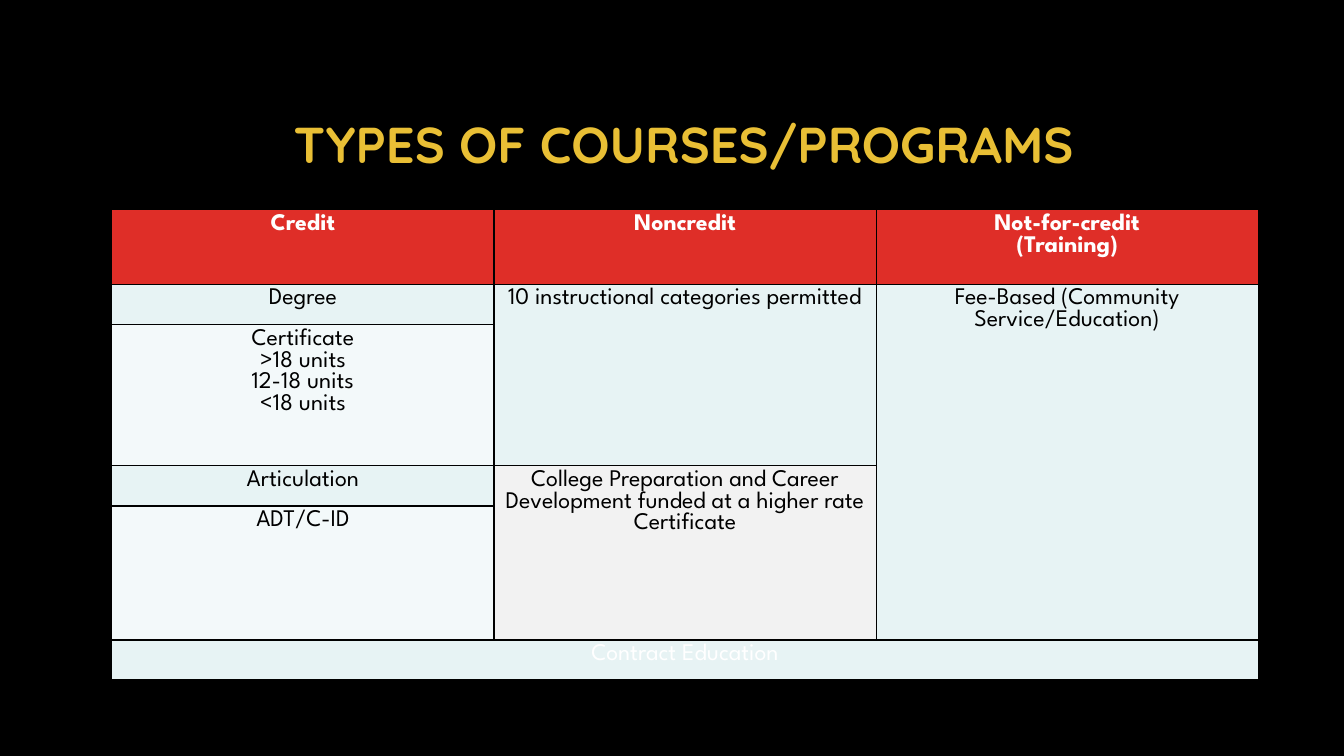
from lxml import etree
from pptx import Presentation
from pptx.dml.color import RGBColor
from pptx.enum import text
from pptx.oxml.ns import qn
from pptx.util import Inches, Pt

COLORS = {
    "black": "000000", "white": "FFFFFF", "gold": "E9BF35", "red": "DF2E28",
    "mint": "E7F3F4", "ice": "F3F9FA", "gray": "F2F2F2",
}
COLUMNS = [3.79] * 3
ROWS = [0.74, 0.4, 1.4, 0.4, 1.33, 0.39]
CELLS = [
    (0, 0, 1, 1, "Credit", "red"),
    (0, 1, 1, 1, "Noncredit", "red"),
    (0, 2, 1, 1, "Not-for-credit\n(Training)", "red"),
    (1, 0, 1, 1, "Degree", "mint"),
    (1, 1, 2, 1, "10 instructional categories permitted", "mint"),
    (1, 2, 4, 1, "Fee-Based (Community Service/Education)", "mint"),
    (2, 0, 1, 1, "Certificate\n>18 units\n12-18 units\n<18 units", "ice"),
    (3, 0, 1, 1, "Articulation", "mint"),
    (3, 1, 2, 1, "College Preparation and Career Development "
                 "funded at a higher rate\nCertificate", "gray"),
    (4, 0, 1, 1, "ADT/C-ID", "ice"),
    (5, 0, 1, 3, "Contract Education", "mint"),
]


def rgb(name):
    return RGBColor.from_string(COLORS[name])


def write(tf, content, font="League Spartan", size=17, color="black",
          bold=False, spacing=None):
    for i, line in enumerate(content.split("\n")):
        p = tf.paragraphs[0] if i == 0 else tf.add_paragraph()
        p.alignment = text.PP_ALIGN.CENTER
        p.line_spacing = spacing
        r = p.add_run()
        r.text = line
        r.font.name = font
        r.font.size = Pt(size)
        r.font.bold = bold
        r.font.color.rgb = rgb(color)


class CourseSlide:
    def __init__(self, prs):
        self.s = prs.slides.add_slide(prs.slide_layouts[6])
        self.s.background.fill.solid()
        self.s.background.fill.fore_color.rgb = rgb("black")

    def title(self, content, left, top, width, height):
        sp = self.s.shapes.add_textbox(
            Inches(left), Inches(top), Inches(width), Inches(height))
        tf = sp.text_frame
        tf.word_wrap = True
        tf.vertical_anchor = text.MSO_ANCHOR.MIDDLE
        write(tf, content, font="Quicksand", size=36, color="gold",
              bold=True, spacing=0.9)

    def border(self, cell):
        tcPr = cell._tc.get_or_add_tcPr()
        for side in ("lnL", "lnR", "lnT", "lnB"):
            ln = etree.SubElement(tcPr, qn(f"a:{side}"), w=str(Pt(1)))
            fill = etree.SubElement(ln, qn("a:solidFill"))
            etree.SubElement(fill, qn("a:srgbClr"), val=COLORS["black"])

    def table(self, left, top):
        table = self.s.shapes.add_table(
            len(ROWS), len(COLUMNS), Inches(left), Inches(top),
            Inches(sum(COLUMNS)), Inches(sum(ROWS))).table
        table.first_row = table.horz_banding = False
        for column, width in zip(table.columns, COLUMNS):
            column.width = Inches(width)
        for row, height in zip(table.rows, ROWS):
            row.height = Inches(height)
        for cell in table.iter_cells():
            cell.margin_left = cell.margin_right = Inches(0.09)
            cell.margin_top = cell.margin_bottom = Inches(0.04)
            self.border(cell)
        for row, col, height, width, content, fill in CELLS:
            cell = table.cell(row, col)
            if height * width > 1:
                cell.merge(table.cell(row + height - 1, col + width - 1))
            cell.fill.solid()
            cell.fill.fore_color.rgb = rgb(fill)
            light = row in (0, len(ROWS) - 1)
            write(cell.text_frame, content, bold=row == 0,
                  color="white" if light else "black")


def main():
    prs = Presentation()
    prs.slide_width, prs.slide_height = Inches(13.33), Inches(7.5)
    slide = CourseSlide(prs)
    slide.title("TYPES OF COURSES/PROGRAMS", 2.07, 0.76, 9.42, 1.41)
    slide.table(1.11, 2.08)
    prs.save("out.pptx")


if __name__ == "__main__":
    main()
